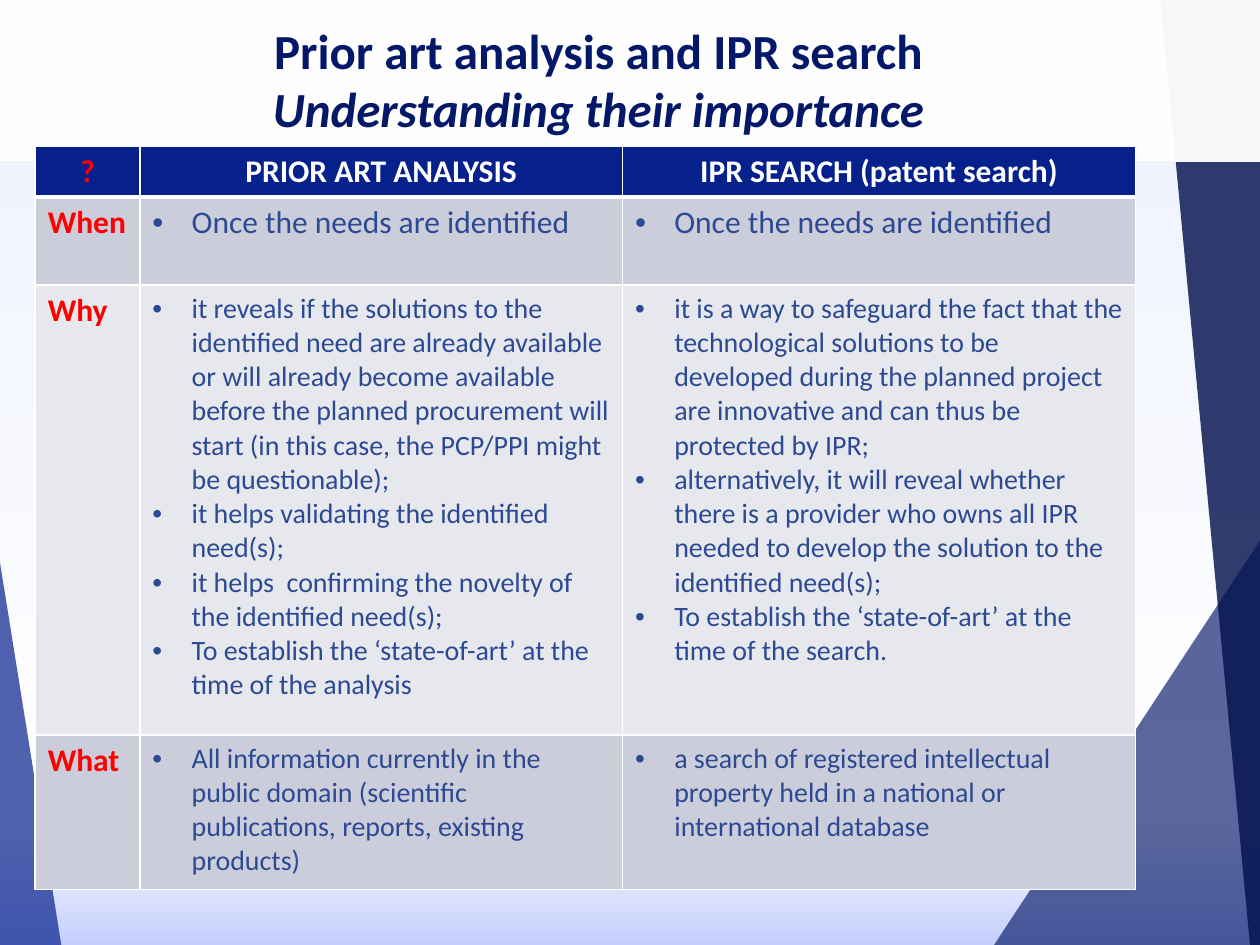
import copy

import pptx
import pptx.dml.color
import pptx.enum.shapes
import pptx.enum.text
import pptx.oxml
import pptx.oxml.ns
import pptx.util

Cm = pptx.util.Cm
Pt = pptx.util.Pt
qn = pptx.oxml.ns.qn
ALIGN = pptx.enum.text.PP_ALIGN

COLOURS = {
    "sky": "EEF1FE", "white": "FFFFFF", "haze": "C3CEFD", "outline": "F2F2F2",
    "royal": "06208C", "navy": "051869", "midnight": "03124F", "title": "041869",
    "red": "FF0000", "body": "2C4A93", "dark_row": "CCCDDA", "light_row": "E7E8EE",
}


def rgb(name):
    return pptx.dml.color.RGBColor.from_string(COLOURS[name])


def add_element(parent, tag, **attributes):
    element = parent.makeelement(qn(tag), attributes)
    parent.append(element)
    return element


def write(para, text, size=18, colour="body", bold=False, italic=False,
          align=ALIGN.LEFT, bullet=False):
    if bullet:
        properties = para._p.get_or_add_pPr()
        properties.set("marL", str(Cm(0.79)))
        properties.set("indent", str(-Cm(0.79)))
        add_element(properties, "a:buFont", typeface="Arial")
        add_element(properties, "a:buChar", char="•")
    para.alignment = align
    span = para.add_run()
    span.text = text
    span.font.name = "Calibri"
    span.font.size = Pt(size)
    span.font.bold = bold
    span.font.italic = italic
    span.font.color.rgb = rgb(colour)


class Painter:
    def __init__(self, page):
        self.page = page

    def background(self, stops):
        fill = self.page.background.fill
        fill.gradient()
        fill.gradient_angle = 270
        stop_list = self.page.element.find(".//" + qn("a:gsLst"))
        while len(stop_list) < len(stops):
            stop_list.append(copy.deepcopy(stop_list[0]))
        for stop, (position, colour) in zip(fill.gradient_stops, stops):
            stop.position = position
            stop.color.rgb = rgb(colour)

    def paint(self, shape, colour, opacity):
        shape.shadow.inherit = False
        shape.fill.solid()
        shape.fill.fore_color.rgb = rgb(colour)
        tint = shape.element.spPr.find(qn("a:solidFill"))[0]
        add_element(tint, "a:alpha", val=str(opacity * 1000))
        shape.line.fill.background()

    def polygon(self, points, colour, opacity):
        corners = [(Cm(x), Cm(y)) for x, y in points]
        builder = self.page.shapes.build_freeform(*corners[0])
        builder.add_line_segments(corners[1:], close=True)
        self.paint(builder.convert_to_shape(), colour, opacity)

    def band(self, left, top, width, height, colour, opacity):
        shape = self.page.shapes.add_shape(
            pptx.enum.shapes.MSO_SHAPE.RECTANGLE, Cm(left), Cm(top), Cm(width), Cm(height))
        self.paint(shape, colour, opacity)
        shape.line.color.rgb = rgb("outline")
        shape.line.width = Pt(0.5)

    def title(self, left, top, width, height, heading, subheading):
        box = self.page.shapes.add_textbox(Cm(left), Cm(top), Cm(width), Cm(height))
        frame = box.text_frame
        frame.word_wrap = True
        style = dict(size=28, colour="title", bold=True, align=ALIGN.CENTER)
        write(frame.paragraphs[0], heading, **style)
        write(frame.add_paragraph(), subheading, italic=True, **style)

    def borders(self, cell, top, bottom):
        properties = cell._tc.get_or_add_tcPr()
        for side, width in (("L", 1), ("R", 1), ("T", top), ("B", bottom)):
            line = add_element(properties, "a:ln" + side, w=str(Pt(width)))
            fill = add_element(line, "a:solidFill")
            add_element(fill, "a:srgbClr", val=COLOURS["white"])

    def table(self, left, top, widths, heights, headings, rows):
        table = self.page.shapes.add_table(
            len(heights), len(widths), Cm(left), Cm(top),
            Cm(sum(widths)), Cm(sum(heights))).table
        table.horz_banding = False
        for column, width in zip(table.columns, widths):
            column.width = Cm(width)
        for row, height in zip(table.rows, heights):
            row.height = Cm(height)
        for index, heading in enumerate(headings):
            cell = table.cell(0, index)
            self.borders(cell, 1, 3)
            cell.fill.solid()
            cell.fill.fore_color.rgb = rgb("royal")
            write(cell.text_frame.paragraphs[0], heading, bold=True, align=ALIGN.CENTER,
                  colour="white" if index else "red")
        for number, (label, size, *answers) in enumerate(rows, 1):
            for index, items in enumerate([[label], *answers]):
                cell = table.cell(number, index)
                self.borders(cell, 3 if number == 1 else 1, 1)
                cell.fill.solid()
                cell.fill.fore_color.rgb = rgb("dark_row" if number % 2 else "light_row")
                frame = cell.text_frame
                for position, item in enumerate(items):
                    para = frame.add_paragraph() if position else frame.paragraphs[0]
                    if index:
                        write(para, item, size=size, bullet=True)
                    else:
                        write(para, item, colour="red", bold=True)


ROWS = [
    ("When", 18, ["Once the needs are identified"], ["Once the needs are identified"]),
    ("Why", 16, [
        "it reveals if the solutions to the identified need are already available or will "
        "already become available before the planned procurement will start (in this case, "
        "the PCP/PPI might be questionable);",
        "it helps validating the identified need(s);",
        "it helps  confirming the novelty of the identified need(s);",
        "To establish the ‘state-of-art’ at the time of the analysis",
    ], [
        "it is a way to safeguard the fact that the technological solutions to be developed "
        "during the planned project are innovative and can thus be protected by IPR;",
        "alternatively, it will reveal whether there is a provider who owns all IPR needed "
        "to develop the solution to the identified need(s);",
        "To establish the ‘state-of-art’ at the time of the search.",
    ]),
    ("What", 16, [
        "All information currently in the public domain (scientific publications, reports, "
        "existing products)",
    ], [
        "a search of registered intellectual property held in a national or international "
        "database",
    ]),
]


def main():
    deck = pptx.Presentation()
    deck.slide_width, deck.slide_height = Cm(25.4), Cm(19.05)
    painter = Painter(deck.slides.add_slide(deck.slide_layouts[6]))
    painter.background([(0, "sky"), (0.87, "white"), (1, "haze")])
    painter.polygon([(-0.03, 11.15), (1.24, 19.07), (-0.03, 19.05)], "royal", 70)
    painter.polygon([(20.04, 19.05), (25.4, 10.9), (25.43, 19.05)], "navy", 66)
    painter.polygon([(23.39, -0.03), (25.2, 19.05), (25.45, 19.05), (25.43, -0.03)],
                    "midnight", 82)
    painter.band(-0.03, -0.03, 25.45, 3.28, "white", 96)
    painter.title(0.33, 0.28, 23.47, 2.64,
                  "Prior art analysis and IPR search", "Understanding their importance")
    painter.table(0.71, 2.95, [2.11, 9.73, 10.34], [1.02, 1.78, 9.07, 3.11],
                  ["?", "PRIOR ART ANALYSIS", "IPR SEARCH (patent search)"], ROWS)
    deck.save("out.pptx")


if __name__ == "__main__":
    main()
